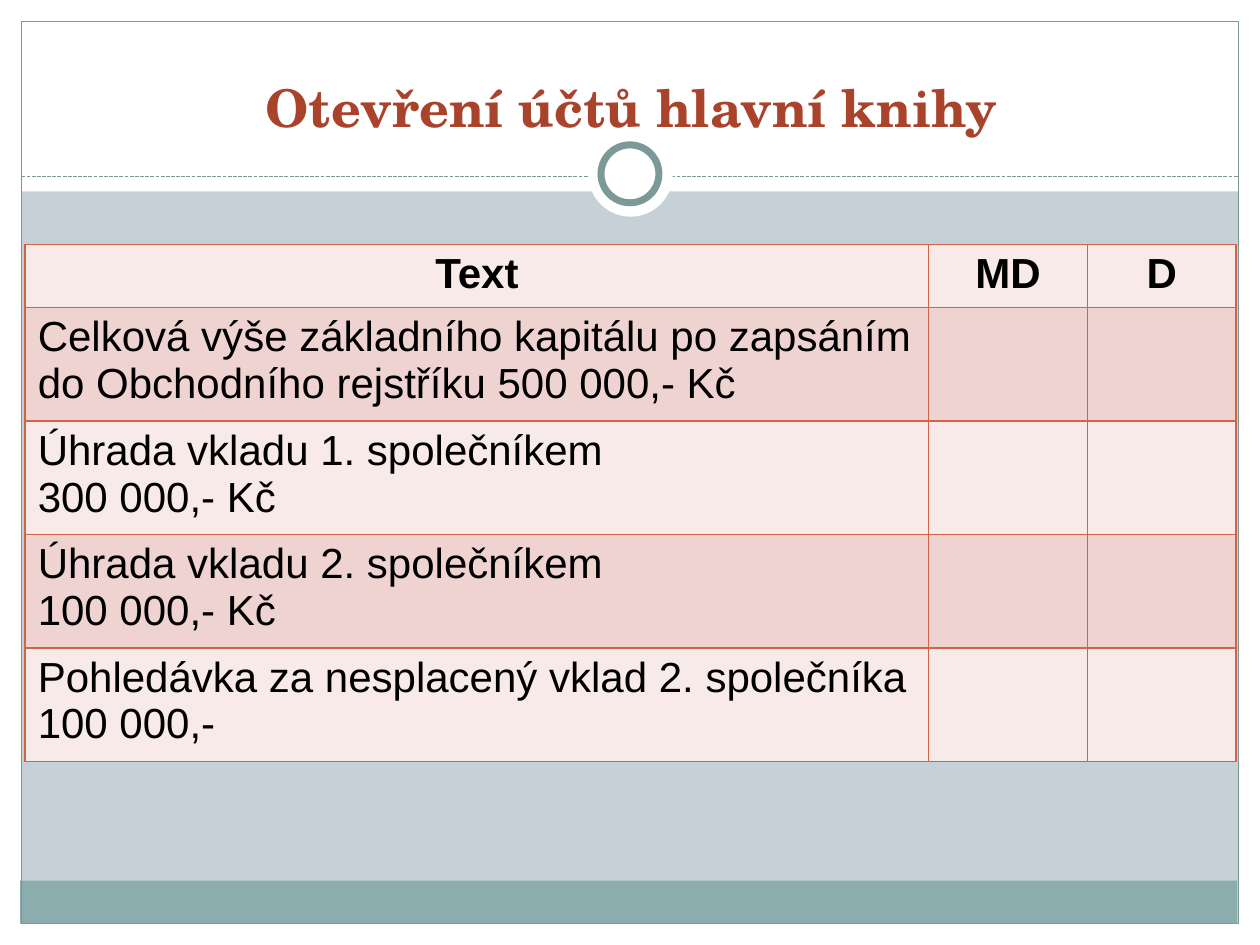
"""Build the slide on opening the general ledger accounts."""
from lxml.etree import SubElement
from pptx import Presentation
from pptx.dml.color import RGBColor
from pptx.enum.dml import MSO_LINE
from pptx.enum.shapes import MSO_CONNECTOR, MSO_SHAPE
from pptx.enum.text import MSO_ANCHOR, PP_ALIGN
from pptx.oxml.ns import qn
from pptx.util import Inches, Pt

COLORS = {
    "background": "C5D1D7", "white": "FFFFFF", "footer": "8CADAE", "frame": "7C999A",
    "title": "A9432B", "border": "D16349", "light": "F7EAE9", "dark": "EED3D0", "black": "000000",
}


def rgb(name):
    return RGBColor.from_string(COLORS[name])


def add_shape(kind, box, fill=None, line_width=None):
    sp = s.shapes.add_shape(kind, *map(Inches, box))
    sp.shadow.inherit = False
    if fill:
        sp.fill.solid()
        sp.fill.fore_color.rgb = rgb(fill)
    else:
        sp.fill.background()
    if line_width:
        sp.line.color.rgb = rgb("frame")
        sp.line.width = Pt(line_width)
    else:
        sp.line.fill.background()


prs = Presentation()
prs.slide_width, prs.slide_height = Inches(10), Inches(7.5)
s = prs.slides.add_slide(prs.slide_layouts[6])
s.background.fill.solid()
s.background.fill.fore_color.rgb = rgb("background")

for box, fill in [
    ((0, 7.33, 10, 0.17), "white"),
    ((0, 0, 10, 1.52), "white"),
    ((0, 0, 0.17, 7.5), "white"),
    ((9.83, 0, 0.17, 7.5), "white"),
    ((0.16, 6.99, 9.66, 0.34), "footer"),
]:
    add_shape(MSO_SHAPE.RECTANGLE, box, fill)
add_shape(MSO_SHAPE.RECTANGLE, (0.17, 0.17, 9.66, 7.16), line_width=0.75)

divider = s.shapes.add_connector(
    MSO_CONNECTOR.STRAIGHT, Inches(0.17), Inches(1.4), Inches(9.83), Inches(1.4))
divider.line.color.rgb = rgb("frame")
divider.line.width = Pt(0.75)
divider.line.dash_style = MSO_LINE.SQUARE_DOT
SubElement(divider.line._get_or_add_ln().getparent(), qn("a:effectLst"))

add_shape(MSO_SHAPE.OVAL, (4.67, 1.05, 0.67, 0.67), "white")
add_shape(MSO_SHAPE.OVAL, (4.77, 1.15, 0.46, 0.46), "white", 4)

title = s.shapes.add_textbox(Inches(0.35), Inches(0.52), Inches(9.33), Inches(0.66))
tf = title.text_frame
tf.word_wrap = True
tf.vertical_anchor = MSO_ANCHOR.MIDDLE
p = tf.paragraphs[0]
p.text = "Otevření účtů hlavní knihy"
p.alignment = PP_ALIGN.CENTER
p.font.name, p.font.size, p.font.bold = "TeX Gyre Schola", Pt(29.7), True
p.font.color.rgb = rgb("title")

rows = [
    ("Text", "MD", "D"),
    ("Celková výše základního kapitálu po zapsáním do Obchodního rejstříku 500 000,- Kč", "", ""),
    ("Úhrada vkladu 1. společníkem\n300 000,- Kč", "", ""),
    ("Úhrada vkladu 2. společníkem\n100 000,- Kč", "", ""),
    ("Pohledávka za nesplacený vklad 2. společníka\n100 000,-", "", ""),
]
widths = (7.17, 1.26, 1.18)
table = s.shapes.add_table(
    len(rows), len(widths), Inches(0.2), Inches(1.94), Inches(9.61), Inches(3.85)).table
for column, width in zip(table.columns, widths):
    column.width = Inches(width)

for i, texts in enumerate(rows):
    table.rows[i].height = Inches(0.84 if i else 0.47)
    for j, text in enumerate(texts):
        cell = table.cell(i, j)
        cell.text = text
        for p in cell.text_frame.paragraphs:
            p.alignment = PP_ALIGN.LEFT if i else PP_ALIGN.CENTER
            p.font.name, p.font.size, p.font.bold = "Arial", Pt(24), i == 0
            p.font.color.rgb = rgb("black")
        tc_pr = cell._tc.get_or_add_tcPr()
        for side in ("lnL", "lnR", "lnT", "lnB"):
            ln = SubElement(tc_pr, qn(f"a:{side}"), w=str(Pt(1)))
            SubElement(SubElement(ln, qn("a:solidFill")), qn("a:srgbClr"), val=COLORS["border"])
        cell.fill.solid()
        cell.fill.fore_color.rgb = rgb("dark" if i % 2 else "light")

prs.save("out.pptx")
